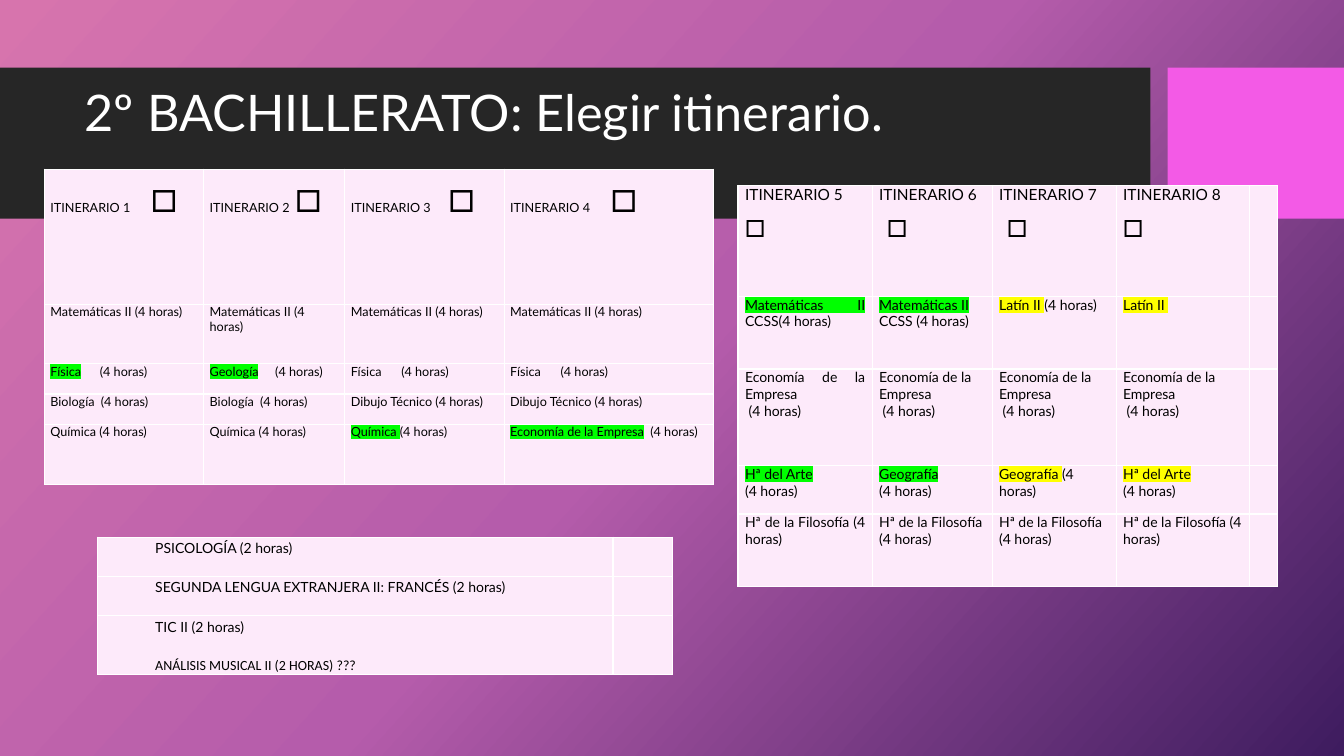
"""Build the slide on the second-year Bachillerato itineraries."""
from copy import deepcopy

from lxml import etree
from pptx import Presentation
from pptx.dml.color import RGBColor
from pptx.enum.shapes import MSO_SHAPE
from pptx.enum.text import MSO_ANCHOR, PP_ALIGN
from pptx.oxml.ns import qn
from pptx.util import Inches, Pt

RECT = MSO_SHAPE.RECTANGLE
TOP = MSO_ANCHOR.TOP
LEFT, JUSTIFY = PP_ALIGN.LEFT, PP_ALIGN.JUSTIFY
COLORS = {"white": "FFFFFF", "black": "000000", "bar": "262626", "accent": "F35AE6",
          "cell": "FDEAFA", "green": "00FF00", "yellow": "FFFF00"}
BACKGROUND = [(0, "D774AD"), (0.5, "B55CAB"), (1, "3E1C5F")]
BARS = [(0, 11.41, "bar"), (11.58, 1.75, "accent")]
TITLE = "2º BACHILLERATO: Elegir itinerario."


def para(*runs, **opts):
    """Describe a paragraph; each run is a text or a (text, style) pair."""
    return {"runs": [r if isinstance(r, tuple) else (r, None) for r in runs], **opts}


BOX = ("□", "box")
HOURS = "(4 horas)"
MATHS = "Matemáticas II (4 horas)"
DRAWING = "Dibujo Técnico (4 horas)"
CHEMISTRY = "Química (4 horas)"
PHILOSOPHY = "Hª de la Filosofía (4 horas)"
BIOLOGY = para("Biología\t" + HOURS, tabs=[0.5])
PHYSICS = para("Física\t" + HOURS, tabs=[0.5])
ECONOMICS = ["Economía de la Empresa", " (4 horas)"]

SCIENCE = [
    [para(f"ITINERARIO {n}\t", BOX, tabs=[tab])
     for n, tab in enumerate([1, 0.85, 0.97, 1], 1)],
    [MATHS] * 4,
    [para(("Física\t", "green"), "\t" + HOURS, tabs=[0.4, 0.49]),
     para(("Geología\t", "green"), "\t" + HOURS, tabs=[0.59, 0.65]), PHYSICS, PHYSICS],
    [BIOLOGY, BIOLOGY, DRAWING, DRAWING],
    [CHEMISTRY, CHEMISTRY, para(("Química ", "green"), HOURS),
     para(("Economía de la Empresa\t", "green"), HOURS, tabs=[1.39])],
]
HUMANITIES = [
    [[f"ITINERARIO {n}", para(BOX, indent=indent)]
     for n, indent in enumerate([0, 0.08, 0.08, 0], 5)] + [None],
    [para(("Matemáticas II ", "green"), "CCSS(4 horas)"),
     para(("Matemáticas II ", "green"), "CCSS (4 horas)"),
     para(("Latín II ", "yellow"), HOURS), para(("Latín II ", "yellow")), None],
    [ECONOMICS] * 4 + [None],
    [[para(("Hª del Arte\t", "green"), tabs=[0.75]), HOURS],
     [para(("Geografía", "green")), HOURS],
     para(("Geografía ", "yellow"), HOURS),
     [para(("Hª del Arte\t", "yellow"), tabs=[0.74]), HOURS], None],
    [PHILOSOPHY] * 4 + [None],
]
OPTIONAL = [
    [para("PSICOLOGÍA (2 horas)", indent=0.5, spacing=1.15), None],
    [para("SEGUNDA LENGUA EXTRANJERA II: FRANCÉS (2 horas)", indent=0.5, spacing=1.15), None],
    [[para("TIC II (2 horas)", indent=0.5, spacing=1.15),
      para(("ANÁLISIS MUSICAL II (2 HORAS) ???", "calibri"), indent=0.5, spacing=1.15,
           before=14)], None],
]
TABLES = [
    {"at": (0.44, 1.68), "cols": [1.58, 1.4, 1.58, 2.08], "rows": [1.34, 0.59, 0.3, 0.3, 0.6],
     "cells": SCIENCE, "inset": 0.06, "head": 9, "size": 9, "box": 31},
    {"at": (7.32, 1.84), "cols": [1.33, 1.19, 1.23, 1.32, 0.28],
     "rows": [1.1, 0.72, 0.96, 0.48, 0.72],
     "cells": HUMANITIES, "inset": 0.07, "head": 11, "size": 10, "box": 24, "justify": True},
    {"at": (0.97, 5.33), "cols": [5.11, 0.59], "rows": [0.39, 0.39, 0.56],
     "cells": OPTIONAL, "inset": 0.07, "head": 10, "size": 10, "box": 10},
]


def rgb(name):
    return RGBColor.from_string(COLORS[name])


def add_solid(parent, tag, name):
    fill = etree.SubElement(parent, qn(tag))
    etree.SubElement(fill, qn("a:srgbClr"), val=COLORS[name])


def add_run(p, text, size, color, style=None):
    r = p.add_run()
    r.text = text
    r.font.size = Pt(size)
    r.font.color.rgb = rgb(color)
    if style in ("green", "yellow"):
        highlight = etree.SubElement(r.font._element, qn("a:highlight"))
        etree.SubElement(highlight, qn("a:srgbClr"), val=COLORS[style])
    r.font.name = "Calibri" if style == "calibri" else "Lato"


def format_paragraph(p, item, align):
    pPr = p._p.get_or_add_pPr()
    if item.get("indent"):
        pPr.set("marL", str(Inches(item["indent"])))
        pPr.set("indent", "0")
    if item.get("tabs"):
        tabs = etree.SubElement(pPr, qn("a:tabLst"))
        for pos in item["tabs"]:
            etree.SubElement(tabs, qn("a:tab"), pos=str(Inches(pos)), algn="l")
    p.alignment = align
    if "spacing" in item:
        p.line_spacing = item["spacing"]
    if "before" in item:
        p.space_before = Pt(item["before"])


def format_cell(cell, inset):
    cell.margin_left = cell.margin_right = Inches(inset)
    cell.margin_top = cell.margin_bottom = 0
    cell.vertical_anchor = TOP
    tcPr = cell._tc.get_or_add_tcPr()
    for side in ("a:lnL", "a:lnR", "a:lnT", "a:lnB"):
        add_solid(etree.SubElement(tcPr, qn(side), w=str(Pt(1))), "a:solidFill", "white")
    cell.fill.solid()
    cell.fill.fore_color.rgb = rgb("cell")


def fill_cell(cell, content, size, box, align):
    items = content if isinstance(content, list) else [content]
    for i, item in enumerate(items):
        item = para(item) if isinstance(item, str) else item
        p = cell.text_frame.add_paragraph() if i else cell.text_frame.paragraphs[0]
        format_paragraph(p, item, align)
        for text, style in item["runs"]:
            add_run(p, text, box if style == "box" else size, "black", style)


def add_subject_table(s, spec_):
    cols, rows = spec_["cols"], spec_["rows"]
    left, top = spec_["at"]
    table = s.shapes.add_table(len(rows), len(cols), Inches(left), Inches(top),
                               Inches(sum(cols)), Inches(sum(rows))).table
    table.first_row = table.horz_banding = False
    for col, width in zip(table.columns, cols):
        col.width = Inches(width)
    for row, height in zip(table.rows, rows):
        row.height = Inches(height)
    for i, contents in enumerate(spec_["cells"]):
        for j, content in enumerate(contents):
            cell = table.cell(i, j)
            format_cell(cell, spec_["inset"])
            if content:
                align = JUSTIFY if spec_.get("justify") and i and not j else LEFT
                size = spec_["size"] if i else spec_["head"]
                fill_cell(cell, content, size, spec_["box"], align)


def set_background(s):
    fill = s.background.fill
    fill.gradient()
    fill.gradient_angle = 360 - 42
    stops = s.element.find(".//" + qn("a:gsLst"))
    stops.insert(1, deepcopy(stops[0]))
    for stop, (position, color) in zip(fill.gradient_stops, BACKGROUND):
        stop.position = position
        stop.color.rgb = RGBColor.from_string(color)


def add_heading(s):
    title = s.shapes.title
    for left, width, color in BARS:
        bar = s.shapes.add_shape(RECT, Inches(left), Inches(0.67), Inches(width), Inches(1.5))
        bar.shadow.inherit = False
        bar.fill.solid()
        bar.fill.fore_color.rgb = rgb(color)
        bar.line.fill.background()
    bar.element.addnext(title.element)
    title.left, title.top = Inches(0.74), Inches(0.82)
    title.width, title.height = Inches(10.51), Inches(1.18)
    tf = title.text_frame
    tf.vertical_anchor = TOP
    p = tf.paragraphs[0]
    p.alignment = LEFT
    p.line_spacing = 0.9
    add_run(p, TITLE, 36, "white")


def main():
    prs = Presentation()
    prs.slide_width, prs.slide_height = Inches(13.33), Inches(7.5)
    s = prs.slides.add_slide(prs.slide_layouts[5])
    set_background(s)
    add_heading(s)
    for table in TABLES:
        add_subject_table(s, table)
    prs.save("out.pptx")


if __name__ == "__main__":
    main()
